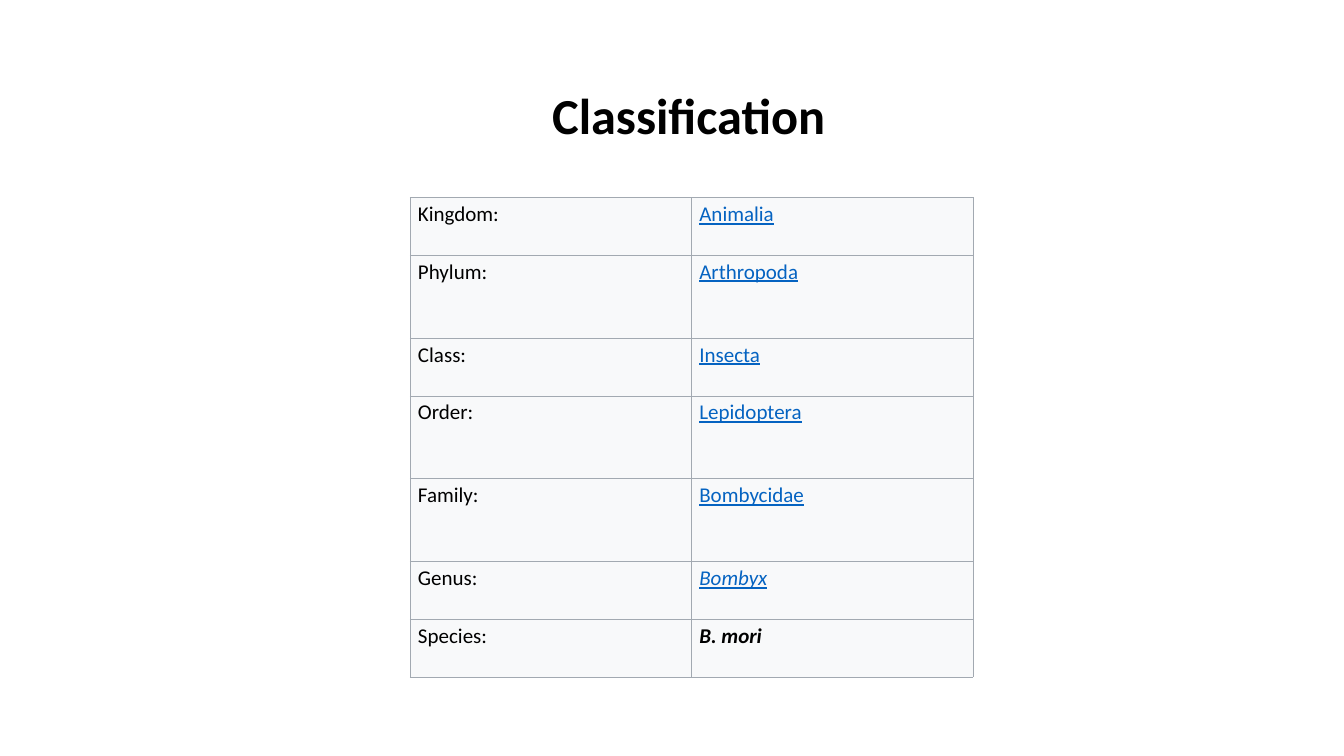
from lxml import etree
from pptx import Presentation
from pptx import util as u
from pptx.dml.color import RGBColor
from pptx.enum import text
from pptx.oxml import ns

SHORT_ROW, TALL_ROW = 41.2, 59.2
LINK = {"color": "0563C1", "underline": True}
RANKS = [
    ("Kingdom:", "Animalia", LINK, SHORT_ROW),
    ("Phylum:", "Arthropoda", LINK, TALL_ROW),
    ("Class:", "Insecta", LINK, SHORT_ROW),
    ("Order:", "Lepidoptera", LINK, TALL_ROW),
    ("Family:", "Bombycidae", LINK, TALL_ROW),
    ("Genus:", "Bombyx", {**LINK, "italic": True}, SHORT_ROW),
    ("Species:", "B. mori", {"bold": True, "italic": True}, SHORT_ROW),
]


def rgb(value):
    return RGBColor.from_string(value)


class SlideBuilder:
    font_name = "Calibri"
    text_color = "000000"
    cell_fill = "F8F9FA"
    border_color = "A2A9B1"
    border_width = 0.6
    cell_margins = {"margin_left": 5.6, "margin_right": 5.6,
                    "margin_top": 2.8, "margin_bottom": 2.8}

    def __init__(self, presentation):
        self.slide = presentation.slides.add_slide(presentation.slide_layouts[6])

    def add_text(self, paragraph, content, size, color=None, **formats):
        run = paragraph.add_run()
        run.text = content
        run.font.color.rgb = rgb(color or self.text_color)
        settings = {"name": self.font_name, "size": u.Pt(size), **formats}
        for name, value in settings.items():
            setattr(run.font, name, value)

    def title(self, content, left, top, width, height):
        shape = self.slide.shapes.add_textbox(*map(u.Pt, (left, top, width, height)))
        shape.text_frame.word_wrap = True
        paragraph = shape.text_frame.paragraphs[0]
        paragraph.alignment = text.PP_ALIGN.CENTER
        self.add_text(paragraph, content, 36, bold=True)

    def border(self, cell):
        """Draw a thin line on all four sides; call before filling the cell."""
        properties = cell._tc.get_or_add_tcPr()
        for side in ("lnL", "lnR", "lnT", "lnB"):
            line = etree.SubElement(properties, ns.qn(f"a:{side}"),
                                    w=str(u.Pt(self.border_width)))
            fill = etree.SubElement(line, ns.qn("a:solidFill"))
            etree.SubElement(fill, ns.qn("a:srgbClr"), val=self.border_color)

    def cell(self, cell, content, formats):
        self.border(cell)
        cell.fill.solid()
        cell.fill.fore_color.rgb = rgb(self.cell_fill)
        for name, value in self.cell_margins.items():
            setattr(cell, name, u.Pt(value))
        self.add_text(cell.text_frame.paragraphs[0], content, 15, **formats)

    def rank_table(self, ranks, left, top, width):
        height = sum(rank[3] for rank in ranks)
        shape = self.slide.shapes.add_table(
            len(ranks), 2, *map(u.Pt, (left, top, width, height)))
        table = shape.table
        table.first_row = table.horz_banding = False
        for row, (label, taxon, formats, row_height) in zip(table.rows, ranks):
            row.height = u.Pt(row_height)
            self.cell(row.cells[0], label, {})
            self.cell(row.cells[1], taxon, formats)


def main():
    presentation = Presentation()
    presentation.slide_width = u.Pt(960)
    presentation.slide_height = u.Pt(540)
    builder = SlideBuilder(presentation)
    builder.rank_table(RANKS, 293, 141.2, 402)
    builder.title("Classification", 291, 56.2, 402, 51)
    presentation.save("out.pptx")


if __name__ == "__main__":
    main()
